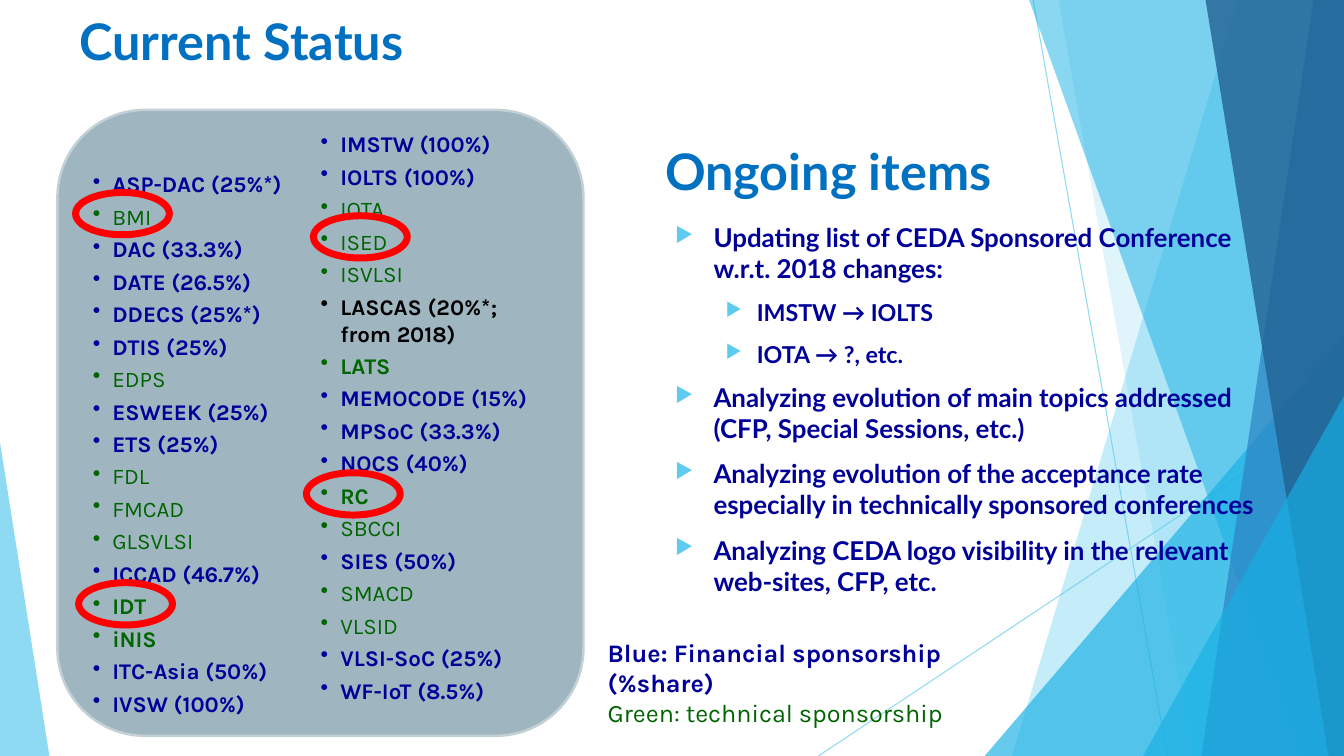
"""Build the Current Status slide with sponsored conferences and ongoing items."""
import pptx
import pptx.dml.color
import pptx.enum.shapes
import pptx.oxml
import pptx.oxml.ns
import pptx.util
from lxml import etree

Pt = pptx.util.Pt
RGBColor = pptx.dml.color.RGBColor
SHAPES = pptx.enum.shapes.MSO_SHAPE
qn = pptx.oxml.ns.qn

SKY = RGBColor(0x5F, 0xCB, 0xEF)
AZURE = RGBColor(0x17, 0xB0, 0xE4)
STEEL = RGBColor(0x2E, 0x83, 0xC3)
NAVY = RGBColor(0x22, 0x62, 0x92)
PANEL = RGBColor(0x9F, 0xB6, 0xC0)
PANEL_EDGE = RGBColor(0xC3, 0xD1, 0xD7)
TITLE = RGBColor(0x00, 0x70, 0xC0)
BLUE = RGBColor(0x00, 0x00, 0x99)
GREEN = RGBColor(0x00, 0x64, 0x01)
BOLD_GREEN = RGBColor(0x00, 0x66, 0x00)
BLACK = RGBColor(0x00, 0x00, 0x00)
RED = RGBColor(0xFF, 0x00, 0x00)
WIDTH, HEIGHT = 960, 540

deck = pptx.Presentation()
deck.slide_width, deck.slide_height = Pt(WIDTH), Pt(HEIGHT)
page = deck.slides.add_slide(deck.slide_layouts[6])


def paint(fill, color, opacity):
    """Fill with a partly transparent colour."""
    fill.solid()
    fill.fore_color.rgb = color
    for node in fill._xPr.iter(qn("a:srgbClr")):
        etree.SubElement(node, qn("a:alpha"), val=str(opacity * 1000))


def write(left, top, width, height, font, lines, gap=0, bullet="", bullet_color=None):
    """Add a text box; each line is text, size, colour, bold, indent, hanging."""
    frame = page.shapes.add_textbox(Pt(left), Pt(top), Pt(width), Pt(height)).text_frame
    frame.word_wrap = True
    for index, (text, size, color, bold, indent, hanging) in enumerate(lines):
        para = frame.paragraphs[0] if index == 0 else frame.add_paragraph()
        para.text = text
        if bullet:
            properties = para._p.get_or_add_pPr()
            properties.set("marL", str(Pt(indent)))
            properties.set("indent", str(-Pt(hanging)))
            if bullet_color:
                holder = etree.SubElement(properties, qn("a:buClr"))
                etree.SubElement(holder, qn("a:srgbClr"), val=str(bullet_color))
                etree.SubElement(properties, qn("a:buSzPct"), val="80000")
            etree.SubElement(properties, qn("a:buChar"), char=bullet)
        para.space_before = Pt(gap if index else 0)
        span = para.runs[0]
        span.font.name, span.font.size, span.font.bold = font, Pt(size), bold
        span.font.color.rgb = color


for start_x, start_y, end_x, end_y in [(738, 0, 833.8, 540), (960, 290.2, 584.6, 540)]:
    ray = page.shapes.add_connector(
        pptx.enum.shapes.MSO_CONNECTOR.STRAIGHT, Pt(start_x), Pt(start_y), Pt(end_x), Pt(end_y))
    ray.line.width = Pt(0.75)
    paint(ray.line.fill, SKY, 70)
    etree.SubElement(ray._element.spPr, qn("a:effectLst"))

facets = [
    ("band", (884.2, 722.9), SKY, 36),
    ("band", (756, 851.8), SKY, 20),
    ("triangle", (703.4, 239.8, 256.6, 1), AZURE, 66),
    ("band", (735.1, 929.5), AZURE, 50),
    ("band", (938.2, 858.2), STEEL, 70),
    ("band", (861.1, 949), NAVY, 80),
    ("triangle", (816.5, 283, 143.5, 1), AZURE, 66),
    ("triangle", (0, 316.1, 35.3, 0), SKY, 70),
]
for kind, geometry, color, opacity in facets:
    if kind == "band":
        top_x, bottom_x = geometry
        outline = page.shapes.build_freeform(Pt(top_x), 0)
        corners = [(WIDTH, 0), (WIDTH, HEIGHT), (bottom_x, HEIGHT)]
        outline.add_line_segments([(Pt(x), Pt(y)) for x, y in corners], close=True)
        facet = outline.convert_to_shape()
    else:
        left, top, width, apex = geometry
        facet = page.shapes.add_shape(
            SHAPES.ISOSCELES_TRIANGLE, Pt(left), Pt(top), Pt(width), Pt(HEIGHT - top))
        facet.adjustments[0] = apex
    facet.shadow.inherit = False
    facet.line.fill.background()
    paint(facet.fill, color, opacity)

items = [
    ("Updating list of CEDA Sponsored Conference w.r.t. 2018 changes:", 0),
    ("IMSTW → IOLTS", 1),
    ("IOTA → ?, etc.", 1),
    ("Analyzing evolution of main topics addressed (CFP, Special Sessions, etc.)", 0),
    ("Analyzing evolution of the acceptance rate especially in technically sponsored conferences", 0),
    ("Analyzing CEDA logo visibility in the relevant web-sites, CFP, etc.", 0),
]
levels = [(18.5, BLUE, True, 27.4, 27.4), (16.6, BLUE, True, 58.3, 22.3)]
write(475.2, 154.8, 444.2, 260, "Lato", [(text, *levels[level]) for text, level in items],
      10, "▶", SKY)

panel = page.shapes.add_shape(SHAPES.ROUNDED_RECTANGLE, Pt(41), Pt(78.5), Pt(375.8), Pt(447.1))
panel.shadow.inherit = False
panel.fill.solid()
panel.fill.fore_color.rgb = PANEL
panel.line.color.rgb = PANEL_EDGE
panel.line.width = Pt(1.75)

financial, technical = (BLUE, True), (GREEN, False)
new_technical, upcoming = (BOLD_GREEN, True), (BLACK, True)
first_column = [
    ("ASP-DAC (25%*)", financial), ("BMI", technical), ("DAC (33.3%)", financial),
    ("DATE (26.5%)", financial), ("DDECS (25%*)", financial), ("DTIS (25%)", financial),
    ("EDPS", technical), ("ESWEEK (25%)", financial), ("ETS (25%)", financial),
    ("FDL", technical), ("FMCAD", technical), ("GLSVLSI", technical),
    ("ICCAD (46.7%)", financial), ("IDT", new_technical), ("iNIS", new_technical),
    ("ITC-Asia (50%)", financial), ("IVSW (100%)", financial),
]
second_column = [
    ("IMSTW (100%)", financial), ("IOLTS (100%)", financial), ("IOTA", technical),
    ("ISED", technical), ("ISVLSI", technical), ("LASCAS (20%*; from 2018)", upcoming),
    ("LATS", new_technical), ("MEMOCODE (15%)", financial), ("MPSoC (33.3%)", financial),
    ("NOCS (40%)", financial), ("RC", new_technical), ("SBCCI", technical),
    ("SIES (50%)", financial), ("SMACD", technical), ("VLSID", technical),
    ("VLSI-SoC (25%)", financial), ("WF-IoT (8.5%)", financial),
]
for left, top, conferences in [(59.2, 118.2, first_column), (222, 89.7, second_column)]:
    lines = [(name, 16, *style, 14, 14) for name, style in conferences]
    write(left, top, 176.4, 515 - top, "Karla", lines, 4, "•")

write(427, 451.4, 324, 51.1, "Karla", [
    ("Blue: Financial sponsorship (%share)", 18, *financial, 0, 0),
    ("Green: technical sponsorship", 18, *technical, 0, 0),
])

for left, top in [(54, 137.5), (218.9, 337.7), (56.2, 416.2), (223.9, 154.1)]:
    marker = page.shapes.add_shape(SHAPES.OVAL, Pt(left), Pt(top), Pt(67), Pt(30.2))
    marker.shadow.inherit = False
    marker.fill.background()
    marker.line.color.rgb = RED
    marker.line.width = Pt(5)

for text, left, top, width in [("Current Status", 49.7, 3.6, 676.8),
                               ("Ongoing items", 468, 96.5, 419.8)]:
    write(left, top, width, 55.4, "Lato", [(text, 36, TITLE, True, 0, 0)])

deck.save("out.pptx")
